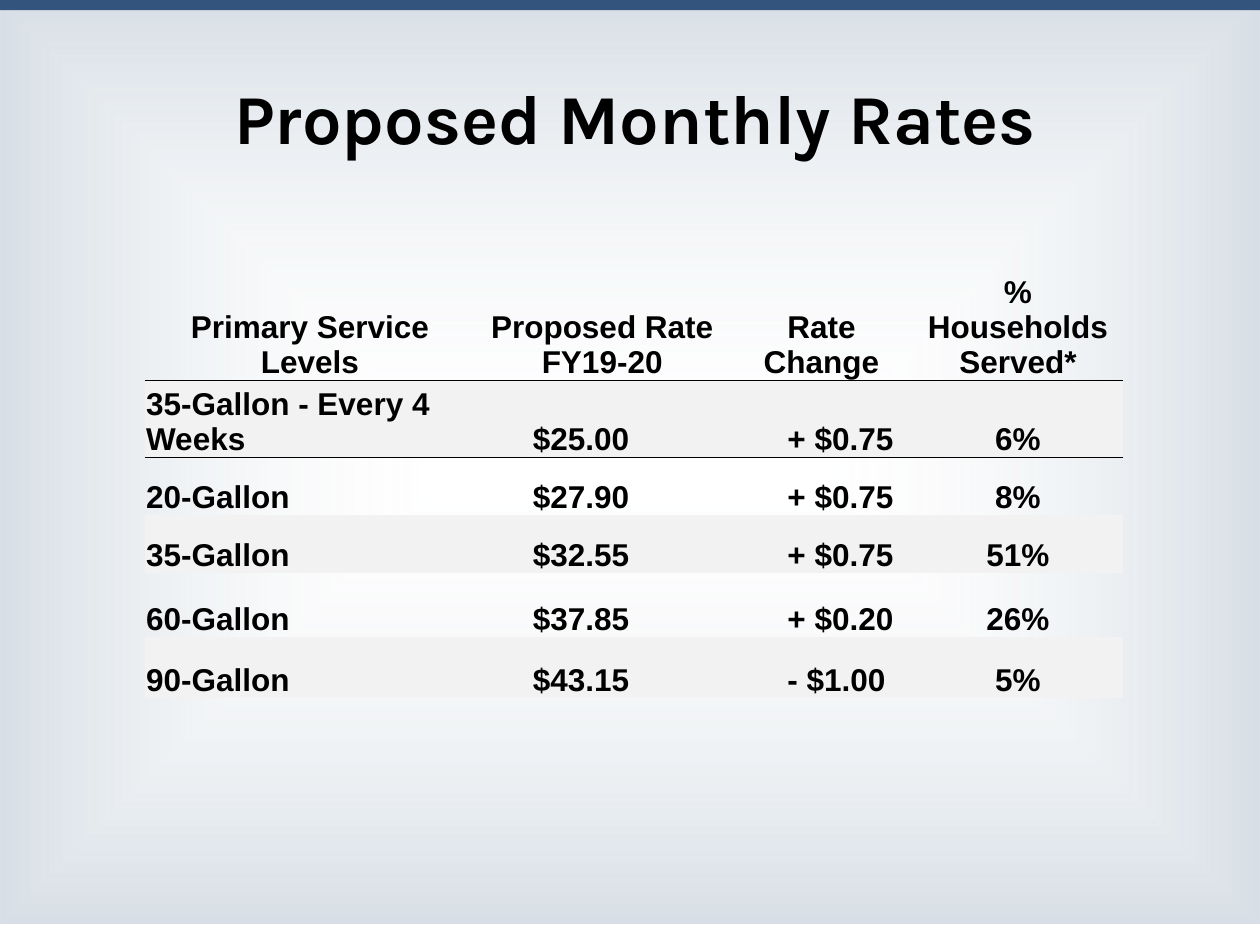
from lxml import etree
from pptx import Presentation
from pptx.dml.color import RGBColor
from pptx.enum.shapes import MSO_SHAPE
from pptx.enum.text import MSO_ANCHOR, PP_ALIGN
from pptx.oxml import parse_xml
from pptx.oxml.ns import nsdecls, qn
from pptx.util import Inches, Pt

RECT = MSO_SHAPE.RECTANGLE
MIDDLE, BOTTOM = MSO_ANCHOR.MIDDLE, MSO_ANCHOR.BOTTOM
LEFT, CENTER = PP_ALIGN.LEFT, PP_ALIGN.CENTER

BLACK = RGBColor(0x00, 0x00, 0x00)
WHITE = RGBColor(0xFF, 0xFF, 0xFF)
MIST = RGBColor(0xCC, 0xD5, 0xDE)
NAVY = RGBColor(0x33, 0x55, 0x7D)
BAND = RGBColor(0xF2, 0xF2, 0xF2)
PLAIN = "{2D5ABB26-0587-4C30-8999-92F81FD0307C}"  # table style without grid

HEAD = ["Primary Service Levels", "Proposed Rate FY19-20",
        "Rate Change", "% Households Served*"]
RATES = [
    ["35-Gallon - Every 4 Weeks", "$25.00", "+ $0.75", "6%"],
    ["20-Gallon", "$27.90", "+ $0.75", "8%"],
    ["35-Gallon", "$32.55", "+ $0.75", "51%"],
    ["60-Gallon", "$37.85", "+ $0.20", "26%"],
    ["90-Gallon", "$43.15", "- $1.00", "5%"],
]
COLS = [2.62, 2.02, 1.46, 1.66]
ROWS = [0.91, 0.61, 0.46, 0.46, 0.51, 0.48]
ALIGNS = [LEFT, LEFT, LEFT, CENTER]
INDENTS = [0.01, 0.46, 0.46, 0.01]


class Deck:
    def __init__(self, slide):
        self.slide = slide
        self.font = "Arial"
        self.size = 18

    def label(self, frame, text, align, font=None, size=None):
        para = frame.paragraphs[0]
        para.alignment = align
        run = para.add_run()
        run.text = text
        run.font.name = font or self.font
        run.font.size = Pt(size or self.size)
        run.font.bold = True
        run.font.color.rgb = BLACK

    def rect(self, x, y, w, h, color):
        shape = self.slide.shapes.add_shape(
            RECT, Inches(x), Inches(y), Inches(w), Inches(h))
        shape.shadow.inherit = False
        shape.line.fill.background()
        shape.fill.solid()
        shape.fill.fore_color.rgb = color
        return shape

    def glow(self, shape, inner, outer):
        """Fade from the centre to the edges; each end is (color, alpha %)."""
        shape.fill.gradient()
        grad = shape._element.spPr.find(qn("a:gradFill"))
        for child in list(grad):
            grad.remove(child)
        stops = etree.SubElement(grad, qn("a:gsLst"))
        for pos, (color, alpha) in ((0, inner), (100, outer)):
            stop = etree.SubElement(stops, qn("a:gs"), pos=str(pos * 1000))
            tint = etree.SubElement(stop, qn("a:srgbClr"), val=str(color))
            etree.SubElement(tint, qn("a:alpha"), val=str(alpha * 1000))
        shade = etree.SubElement(grad, qn("a:path"), {"path": "shape"})
        half = "50000"
        etree.SubElement(shade, qn("a:fillToRect"), l=half, t=half, r=half, b=half)

    def title(self, text, x, y, w, h):
        box = self.slide.shapes.title
        box.left, box.top = Inches(x), Inches(y)
        box.width, box.height = Inches(w), Inches(h)
        box.text_frame.vertical_anchor = MIDDLE
        self.label(box.text_frame, text, CENTER, "Karla", 40)

    def rule(self, cell, side):
        cell._tc.get_or_add_tcPr().insert(0, parse_xml(
            f'<a:{side} {nsdecls("a")} w="{Pt(1)}"><a:solidFill>'
            f'<a:srgbClr val="{BLACK}"/></a:solidFill></a:{side}>'))

    def cell(self, cell, text, align, indent, color):
        cell.vertical_anchor = BOTTOM
        cell.margin_left = Inches(indent)
        cell.margin_top = cell.margin_right = Inches(0.01)
        cell.margin_bottom = 0
        if color is None:
            cell.fill.background()
        else:
            cell.fill.solid()
            cell.fill.fore_color.rgb = color
        self.label(cell.text_frame, text, align)

    def table(self, x, y):
        table = self.slide.shapes.add_table(
            len(ROWS), len(COLS), Inches(x), Inches(y),
            Inches(sum(COLS)), Inches(sum(ROWS))).table
        table.first_row = table.horz_banding = False
        table._tbl.tblPr.find(qn("a:tableStyleId")).text = PLAIN
        for col, width in zip(table.columns, COLS):
            col.width = Inches(width)
        for row, height in zip(table.rows, ROWS):
            row.height = Inches(height)
        for c, text in enumerate(HEAD):
            self.cell(table.cell(0, c), text, CENTER, 0.01, None)
            self.rule(table.cell(0, c), "lnB")
        for r, texts in enumerate(RATES, 1):
            color = BAND if r % 2 else None
            for c, text in enumerate(texts):
                self.cell(table.cell(r, c), text, ALIGNS[c], INDENTS[c], color)
        for c in range(len(COLS)):
            self.rule(table.cell(1, c), "lnT")


def main():
    prs = Presentation()
    prs.slide_width, prs.slide_height = Inches(10), Inches(7.5)
    slide = prs.slides.add_slide(prs.slide_layouts[5])
    deck = Deck(slide)

    # Backdrop and top bar, kept behind the title
    back = deck.rect(0, 0, 10, 7.33, WHITE)
    deck.glow(back, (WHITE, 4), (MIST, 77))
    deck.rect(0, 0, 10, 0.08, NAVY)
    slide.shapes._spTree.append(slide.shapes.title._element)

    # Title and rates
    deck.title("Proposed Monthly Rates", 0.33, 0.3, 9.42, 1.25)
    deck.table(1.15, 2.11)

    prs.save("out.pptx")


if __name__ == "__main__":
    main()
